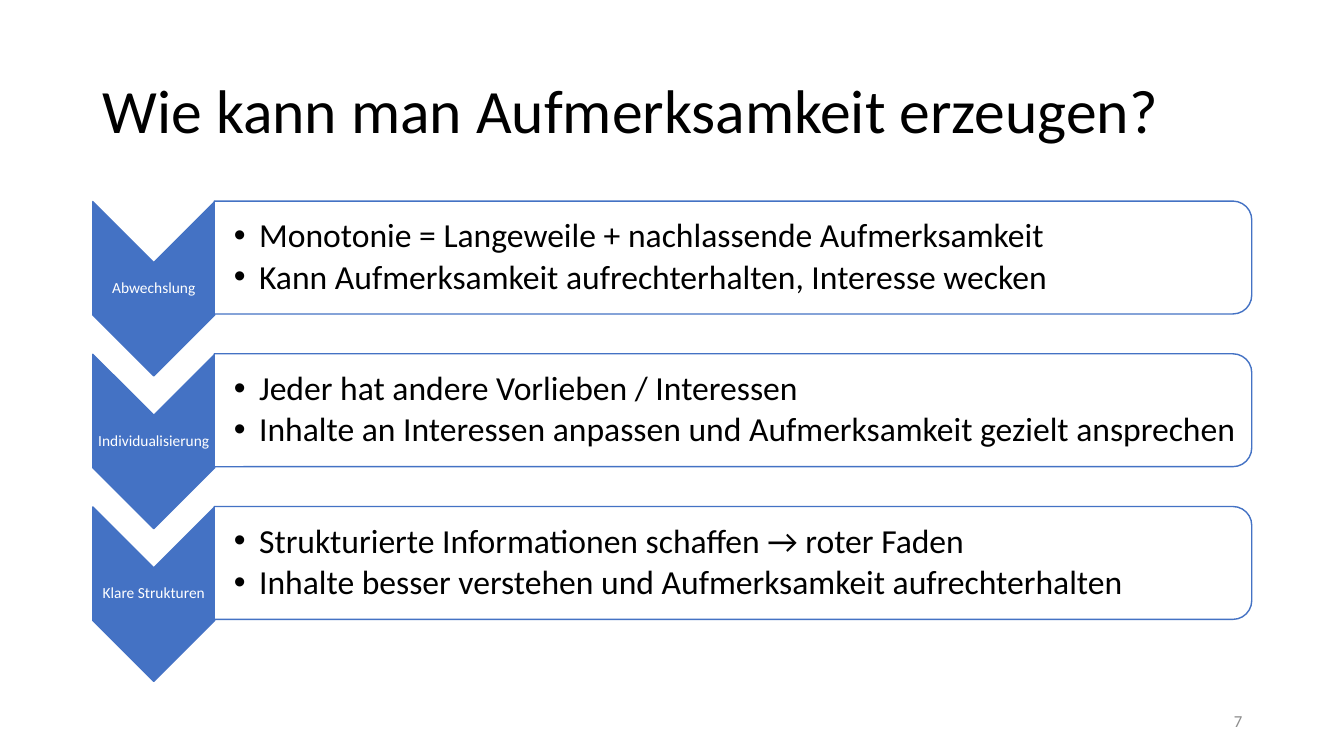
import pptx
import pptx.util
import pptx.dml.color
import pptx.enum.shapes
import pptx.enum.text
import pptx.oxml.ns
import lxml.etree
from dataclasses import dataclass

Inches = pptx.util.Inches
Pt = pptx.util.Pt
RGB = pptx.dml.color.RGBColor.from_string
Align = pptx.enum.text.PP_ALIGN
Preset = pptx.enum.shapes.MSO_SHAPE
qn = pptx.oxml.ns.qn


@dataclass(frozen=True)
class Theme:
    font: str = "Calibri"
    accent: str = "4472C4"
    white: str = "FFFFFF"
    black: str = "000000"
    gray: str = "8C8C8C"
    title_size: int = 44
    bullet_size: int = 24
    label_size: int = 11
    number_size: int = 12


theme = Theme()


def add_text(slide, box, lines, size, color, align=Align.LEFT, insets=(0.1, 0.05, 0.1, 0.05),
             line_spacing=0.9, space_after=0, bullet=False):
    frame = slide.shapes.add_textbox(*map(Inches, box)).text_frame
    frame.word_wrap = True
    frame.vertical_anchor = pptx.enum.text.MSO_ANCHOR.MIDDLE
    frame.margin_left, frame.margin_top, frame.margin_right, frame.margin_bottom = map(Inches, insets)
    for index, line in enumerate(lines):
        paragraph = frame.add_paragraph() if index else frame.paragraphs[0]
        paragraph.alignment = align
        paragraph.line_spacing = line_spacing
        paragraph.space_after = Pt(space_after)
        if bullet:
            properties = paragraph._p.get_or_add_pPr()
            properties.set("marL", str(Inches(0.25)))
            properties.set("indent", str(Inches(-0.25)))
            lxml.etree.SubElement(properties, qn("a:buFont"), typeface="Arial")
            lxml.etree.SubElement(properties, qn("a:buChar"), char="•")
        run = paragraph.add_run()
        run.text = line
        run.font.name = theme.font
        run.font.size = Pt(size)
        run.font.color.rgb = RGB(color)


def add_rotated(slide, preset, box, fill):
    shape = slide.shapes.add_shape(preset, *map(Inches, box))
    shape.rotation = 90
    shape.shadow.inherit = False
    shape.fill.solid()
    shape.fill.fore_color.rgb = RGB(fill)
    shape.line.color.rgb = RGB(theme.accent)
    shape.line.width = Pt(1)


presentation = pptx.Presentation()
presentation.slide_width = Inches(13.33)
presentation.slide_height = Inches(7.5)
slide = presentation.slides.add_slide(presentation.slide_layouts[6])

add_text(slide, (0.92, 0.4, 11.5, 1.45), ["Wie kann man Aufmerksamkeit erzeugen?"],
         theme.title_size, theme.black)

methods = [
    ("Abwechslung", ["Monotonie = Langeweile + nachlassende Aufmerksamkeit",
                     "Kann Aufmerksamkeit aufrechterhalten, Interesse wecken"]),
    ("Individualisierung", ["Jeder hat andere Vorlieben / Interessen",
                            "Inhalte an Interessen anpassen und Aufmerksamkeit gezielt ansprechen"]),
    ("Klare Strukturen", ["Strukturierte Informationen schaffen → roter Faden",
                          "Inhalte besser verstehen und Aufmerksamkeit aufrechterhalten"]),
]
first_top = 2.0
row_pitch = 1.515

for row, (label, bullets) in enumerate(methods):
    top = first_top + row * row_pitch
    add_rotated(slide, Preset.CHEVRON, (0.66, top + 0.26, 1.73, 1.21), theme.accent)
    add_text(slide, (0.92, top + 0.6, 1.21, 0.52), [label], theme.label_size, theme.white,
             align=Align.CENTER, insets=(0.01,) * 4, space_after=3.85)
    add_rotated(slide, Preset.ROUND_2_SAME_RECTANGLE, (6.71, top - 4.59, 1.12, 10.29), theme.white)
    add_text(slide, (2.13, top + 0.05, 10.24, 1.01), bullets, theme.bullet_size, theme.black,
             insets=(0.19, 0.02, 0.02, 0.02), space_after=3.6, bullet=True)

add_text(slide, (9.42, 6.95, 3, 0.4), ["7"], theme.number_size, theme.gray,
         align=Align.RIGHT, line_spacing=1.0)

presentation.save("out.pptx")
